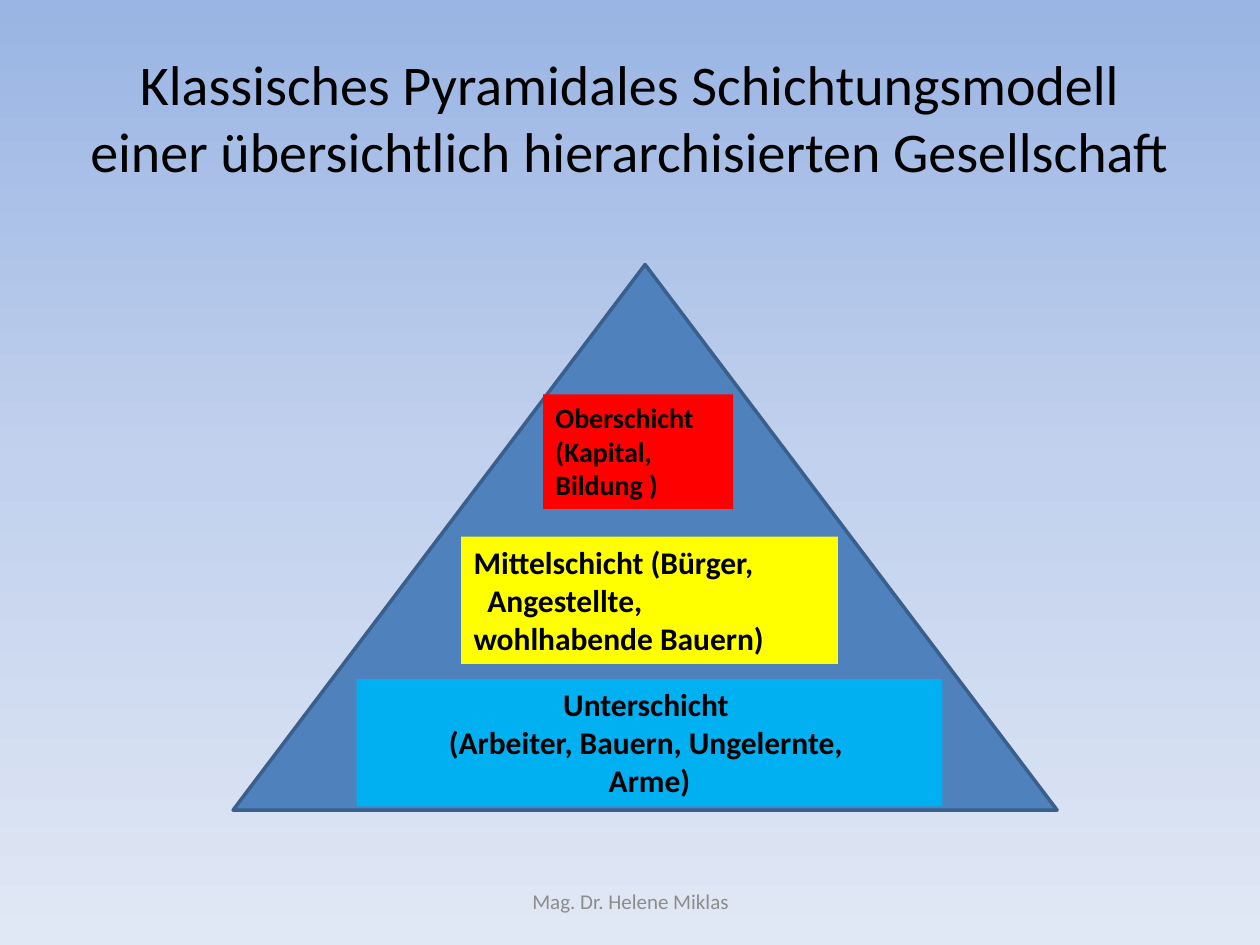
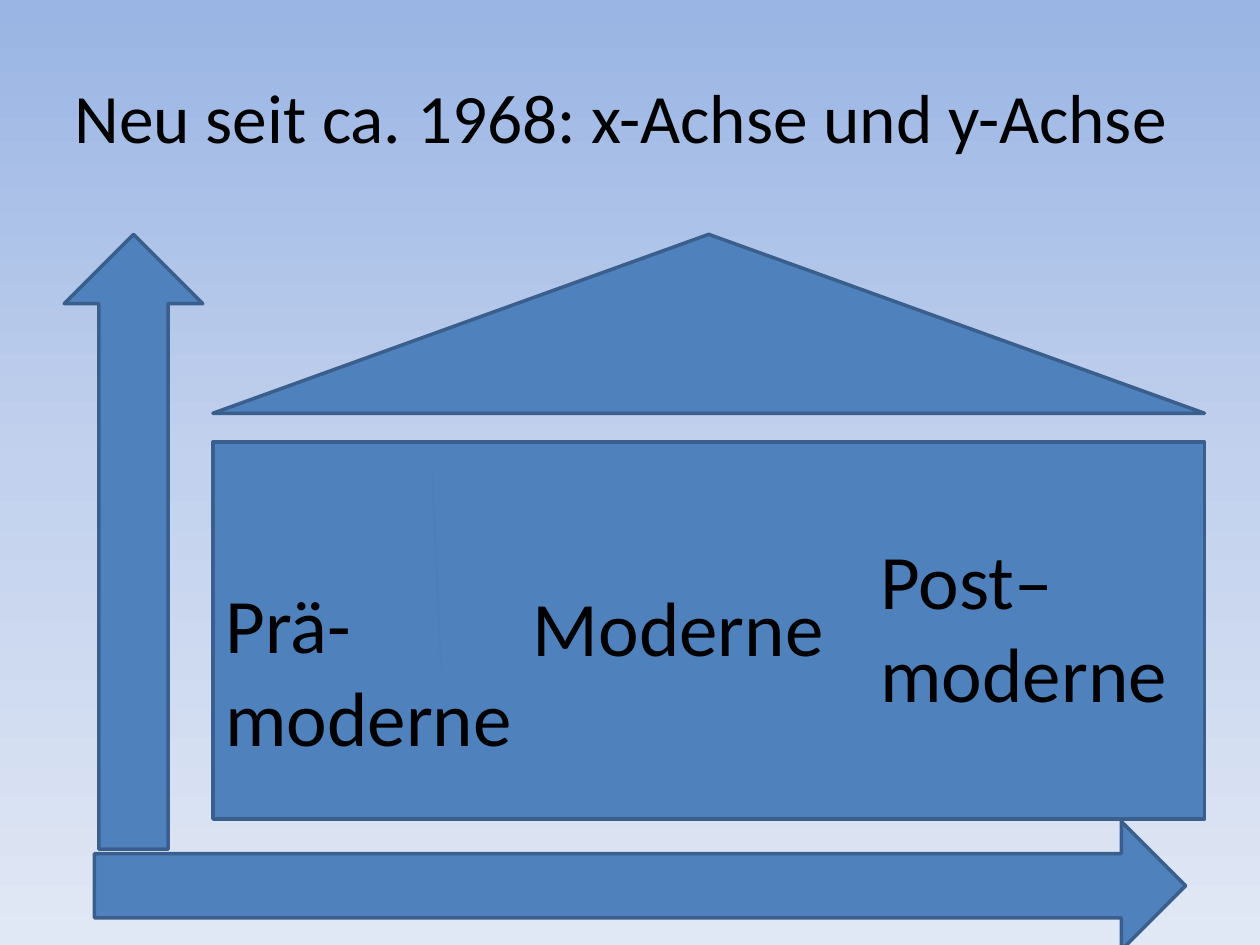
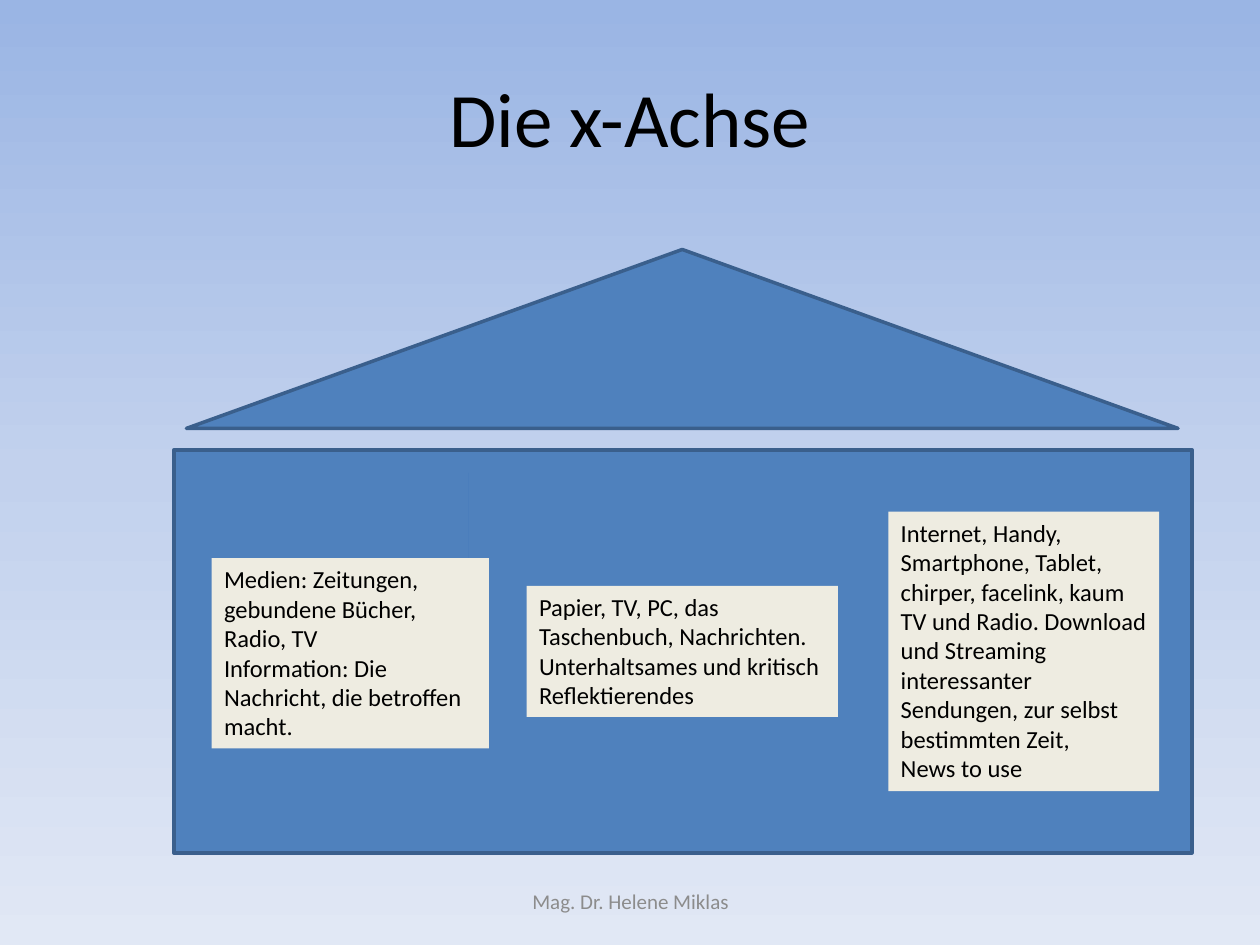
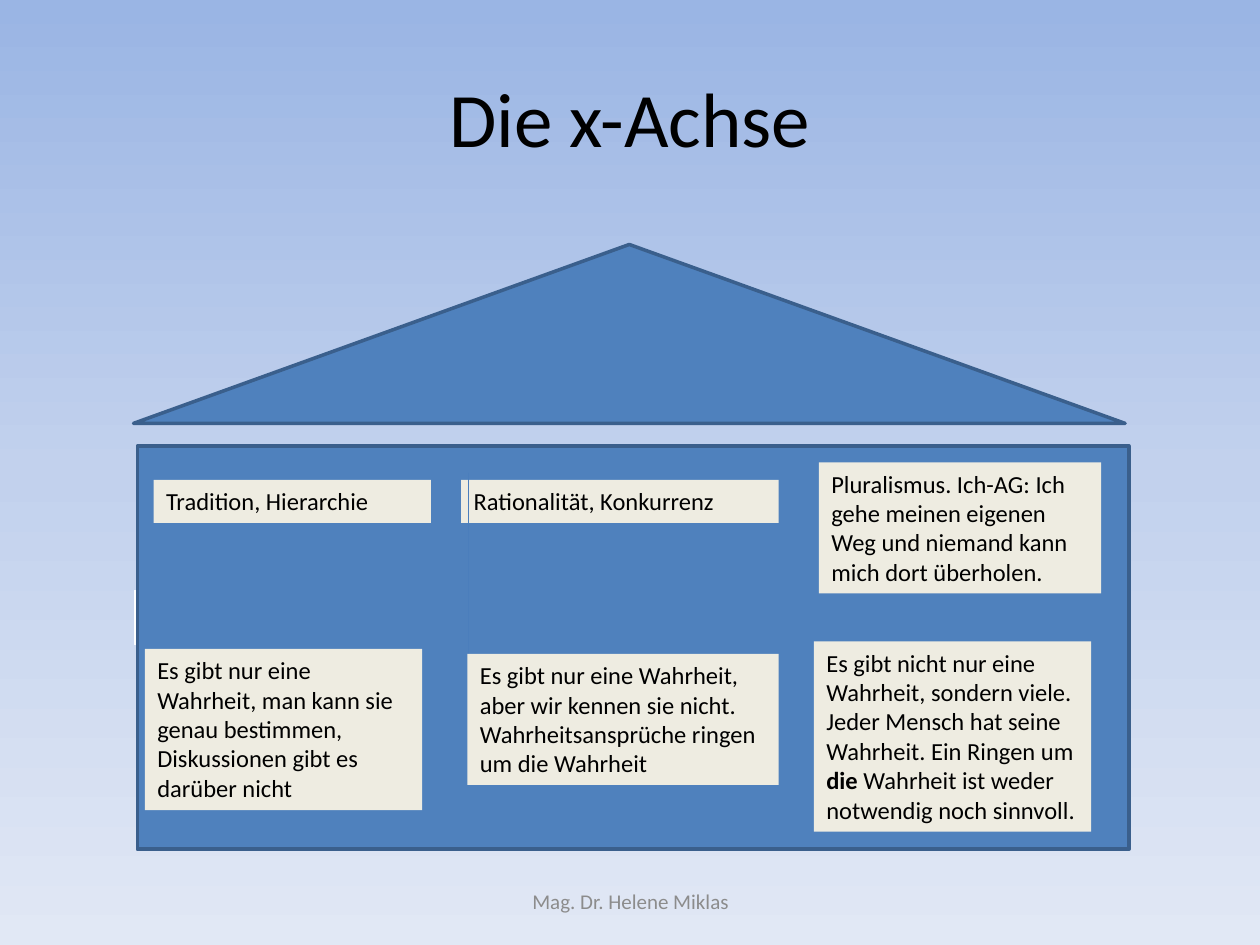
from copy import deepcopy
from dataclasses import dataclass

from lxml import etree
from pptx import Presentation
from pptx.dml.color import RGBColor
from pptx.enum import shapes, text
from pptx.oxml.ns import qn
from pptx.util import Inches, Pt

FONT = "Calibri"
BLACK = RGBColor(0x00, 0x00, 0x00)
WHITE = RGBColor(0xFF, 0xFF, 0xFF)
GRAY = RGBColor(0x8C, 0x8C, 0x8C)
BLUE = RGBColor(0x4F, 0x81, 0xBD)
OUTLINE = RGBColor(0x3A, 0x5F, 0x8C)
DIVIDER = RGBColor(0x4B, 0x7E, 0xBC)
CREAM = RGBColor(0xEE, 0xEC, 0xE1)
RED = RGBColor(0xFF, 0x00, 0x00)
YELLOW = RGBColor(0xFF, 0xFF, 0x00)
CYAN = RGBColor(0x00, 0xB0, 0xF0)
SKY = (
    (0, RGBColor(0x9A, 0xB5, 0xE4)),
    (0.5, RGBColor(0xC2, 0xD1, 0xED)),
    (1, RGBColor(0xE1, 0xE8, 0xF5)),
)

SHAPE = shapes.MSO_SHAPE
LEFT, CENTER = text.PP_ALIGN.LEFT, text.PP_ALIGN.CENTER
TOP, MIDDLE = text.MSO_ANCHOR.TOP, text.MSO_ANCHOR.MIDDLE
FOOTER = "Mag. Dr. Helene Miklas"
ROOF_WIDTH, ROOF_HEIGHT = 7.87, 1.42


@dataclass(frozen=True)
class Box:
    """A rectangle on the slide, in inches."""
    left: float
    top: float
    width: float
    height: float

    def lengths(self) -> tuple:
        return tuple(Inches(v) for v in (self.left, self.top, self.width, self.height))


@dataclass(frozen=True)
class Label:
    """A text block; a fill of None leaves it transparent."""
    box: Box
    paragraphs: tuple
    fill: RGBColor | None = CREAM
    size: float = 14
    bold: bool = False
    align: text.PP_ALIGN = LEFT


def write(shape, paragraphs, *, size, color=BLACK, bold=False, align=LEFT,
          anchor=TOP, grow=False) -> None:
    """Fill a shape with text; parts between ** marks are bold."""
    frame = shape.text_frame
    frame.word_wrap = True
    frame.vertical_anchor = anchor
    if grow:
        frame.auto_size = text.MSO_AUTO_SIZE.SHAPE_TO_FIT_TEXT
    for number, content in enumerate(paragraphs):
        paragraph = frame.add_paragraph() if number else frame.paragraphs[0]
        paragraph.alignment = align
        for position, part in enumerate(content.split("**")):
            run = paragraph.add_run()
            run.text = part
            run.font.name = FONT
            run.font.size = Pt(size)
            run.font.bold = bold or position % 2 == 1
            run.font.color.rgb = color


def add_text(slide, box: Box, *paragraphs: str, **style):
    shape = slide.shapes.add_textbox(*box.lengths())
    write(shape, paragraphs, **style)
    return shape


def add_figure(slide, kind: SHAPE, box: Box, fill=BLUE, outline=OUTLINE):
    shape = slide.shapes.add_shape(kind, *box.lengths())
    shape.shadow.inherit = False
    shape.fill.solid()
    shape.fill.fore_color.rgb = fill
    if outline is None:
        shape.line.fill.background()
    else:
        shape.line.color.rgb = outline
        shape.line.width = Pt(2)
    return shape


def add_label(slide, label: Label):
    if label.fill is None:
        shape = slide.shapes.add_textbox(*label.box.lengths())
    else:
        shape = add_figure(slide, SHAPE.RECTANGLE, label.box, label.fill, None)
    write(shape, label.paragraphs, size=label.size, bold=label.bold,
          align=label.align, grow=True)
    return shape


def add_house(slide, walls: Box, roof_left: float, roof_top: float) -> None:
    add_figure(slide, SHAPE.RECTANGLE, walls)
    add_figure(slide, SHAPE.ISOSCELES_TRIANGLE,
               Box(roof_left, roof_top, ROOF_WIDTH, ROOF_HEIGHT))


def add_divider(slide, start_x: float, end_x: float) -> None:
    line = slide.shapes.add_connector(
        shapes.MSO_CONNECTOR.STRAIGHT,
        Inches(start_x), Inches(3.75), Inches(end_x), Inches(5.3))
    line.line.color.rgb = DIVIDER
    line.line.width = Pt(0.75)
    etree.SubElement(line.element.spPr, qn("a:effectLst"))


def add_blue_table(slide, box: Box, columns: int) -> None:
    """One empty row of blue cells with white borders, thicker below."""
    table = slide.shapes.add_table(1, columns, *box.lengths()).table
    for cell in table.iter_cells():
        properties = cell._tc.get_or_add_tcPr()
        for side, points in (("L", 1), ("R", 1), ("T", 1), ("B", 3)):
            border = etree.SubElement(properties, qn(f"a:ln{side}"), w=str(Pt(points)))
            solid = etree.SubElement(border, qn("a:solidFill"))
            etree.SubElement(solid, qn("a:srgbClr"), val=str(WHITE))
        cell.fill.solid()
        cell.fill.fore_color.rgb = BLUE


def paint_background(master) -> None:
    fill = master.background.fill
    fill.gradient()
    fill.gradient_angle = 270
    stop_list = master.element.find(".//" + qn("p:bgPr")).find(".//" + qn("a:gsLst"))
    stop_list.append(deepcopy(stop_list[0]))
    for stop, (position, color) in zip(fill.gradient_stops, SKY):
        stop.position = position
        stop.color.rgb = color


def add_slide(presentation, title: str, size: float = 44, footer: bool = True,
              title_box: Box = Box(0.5, 0.3, 9, 1.25)):
    slide = presentation.slides.add_slide(presentation.slide_layouts[6])
    add_text(slide, title_box, title, size=size, align=CENTER, anchor=MIDDLE)
    if footer:
        add_text(slide, Box(3.42, 6.95, 3.17, 0.4), FOOTER, size=12, color=GRAY,
                 align=CENTER, anchor=MIDDLE)
    return slide


def build_pyramid(presentation) -> None:
    slide = add_slide(
        presentation,
        "Klassisches Pyramidales Schichtungsmodell "
        "einer übersichtlich hierarchisierten Gesellschaft", size=32)
    add_figure(slide, SHAPE.ISOSCELES_TRIANGLE, Box(1.85, 2.1, 6.54, 4.33))
    add_label(slide, Label(Box(4.31, 3.13, 1.51, 0.91),
                           ("Oberschicht (Kapital, Bildung )",), RED, 16, True))
    middle_class = add_label(slide, Label(
        Box(3.66, 4.26, 2.99, 1.01),
        ("Mittelschicht (Bürger,", "Angestellte,", "wohlhabende Bauern)"),
        YELLOW, 18, True))
    indented = middle_class.text_frame.paragraphs[1]
    indented._p.get_or_add_pPr().set("marL", str(Inches(0.11)))
    add_label(slide, Label(
        Box(2.83, 5.39, 4.65, 1.01),
        ("Unterschicht ", "(Arbeiter, Bauern, Ungelernte, ", "Arme)"),
        CYAN, 18, True, CENTER))


def build_axes(presentation) -> None:
    slide = add_slide(presentation, "Neu seit ca. 1968: x-Achse und y-Achse", size=39.6,
                      footer=False, title_box=Box(0.43, 0.29, 9, 1.25))
    add_house(slide, Box(1.69, 3.51, ROOF_WIDTH, 2.99), 1.69, 1.86)
    for box, paragraphs in (
        (Box(1.69, 4.53, 2.6, 1.58), ("Prä-moderne",)),
        (Box(4.13, 4.55, 2.91, 0.84), ("Moderne",)),
        (Box(6.89, 4.18, 2.68, 1.58), ("Post–", "moderne")),
    ):
        add_label(slide, Label(box, paragraphs, None, 44))
    add_divider(slide, 3.43, 3.5)
    add_figure(slide, SHAPE.UP_ARROW, Box(0.51, 1.86, 1.1, 4.88))
    add_figure(slide, SHAPE.RIGHT_ARROW, Box(0.75, 6.52, 8.66, 1.02))


def build_media(presentation) -> None:
    slide = add_slide(presentation, "Die x-Achse")
    add_house(slide, Box(1.38, 3.57, 8.08, 3.2), 1.48, 1.98)
    add_divider(slide, 3.72, 3.72)
    for label in (
        Label(Box(1.68, 4.43, 2.2, 1.51),
              ("Medien: Zeitungen, gebundene Bücher, Radio, TV",
               "Information: Die Nachricht, die betroffen macht.")),
        Label(Box(4.18, 4.65, 2.47, 1.04),
              ("Papier, TV, PC, das Taschenbuch, Nachrichten. "
               "Unterhaltsames und kritisch Reflektierendes",)),
        Label(Box(7.05, 4.06, 2.15, 2.22),
              ("Internet, Handy, Smartphone, Tablet, chirper, facelink, kaum "
               "TV und Radio. Download und Streaming interessanter "
               "Sendungen, zur selbst bestimmten Zeit,",
               "News to use")),
    ):
        add_label(slide, label)


def build_truth(presentation) -> None:
    slide = add_slide(presentation, "Die x-Achse")
    add_blue_table(slide, Box(1.07, 4.69, 7.56, 0.41), columns=3)
    add_house(slide, Box(1.09, 3.54, ROOF_WIDTH, 3.2), 1.06, 1.94)
    values = (
        Label(Box(1.22, 3.81, 2.2, 0.34), ("Tradition, Hierarchie",)),
        Label(Box(3.66, 3.81, 2.52, 0.34), ("Rationalität, Konkurrenz",)),
        Label(Box(6.5, 3.67, 2.24, 1.04),
              ("Pluralismus. Ich-AG: Ich gehe meinen eigenen Weg und niemand "
               "kann mich dort überholen.",)),
    )
    truths = (
        Label(Box(1.15, 5.15, 2.2, 1.28),
              ("Es gibt nur eine Wahrheit, man kann sie genau bestimmen, "
               "Diskussionen gibt es darüber nicht",)),
        Label(Box(3.71, 5.19, 2.47, 1.04),
              ("Es gibt nur eine Wahrheit, aber wir kennen sie nicht. "
               "Wahrheitsansprüche ringen um die Wahrheit",)),
        Label(Box(6.46, 5.09, 2.2, 1.51),
              ("Es gibt nicht nur eine Wahrheit, sondern viele. Jeder Mensch hat "
               "seine Wahrheit. Ein Ringen um **die **Wahrheit ist weder "
               "notwendig noch sinnvoll.",)),
    )
    for label in values:
        add_label(slide, label)
    add_divider(slide, 3.72, 3.72)
    for label in truths:
        add_label(slide, label)


def main() -> None:
    presentation = Presentation()
    presentation.slide_width = Inches(10)
    presentation.slide_height = Inches(7.5)
    paint_background(presentation.slide_master)
    for build in (build_pyramid, build_axes, build_media, build_truth):
        build(presentation)
    presentation.save("out.pptx")


if __name__ == "__main__":
    main()
